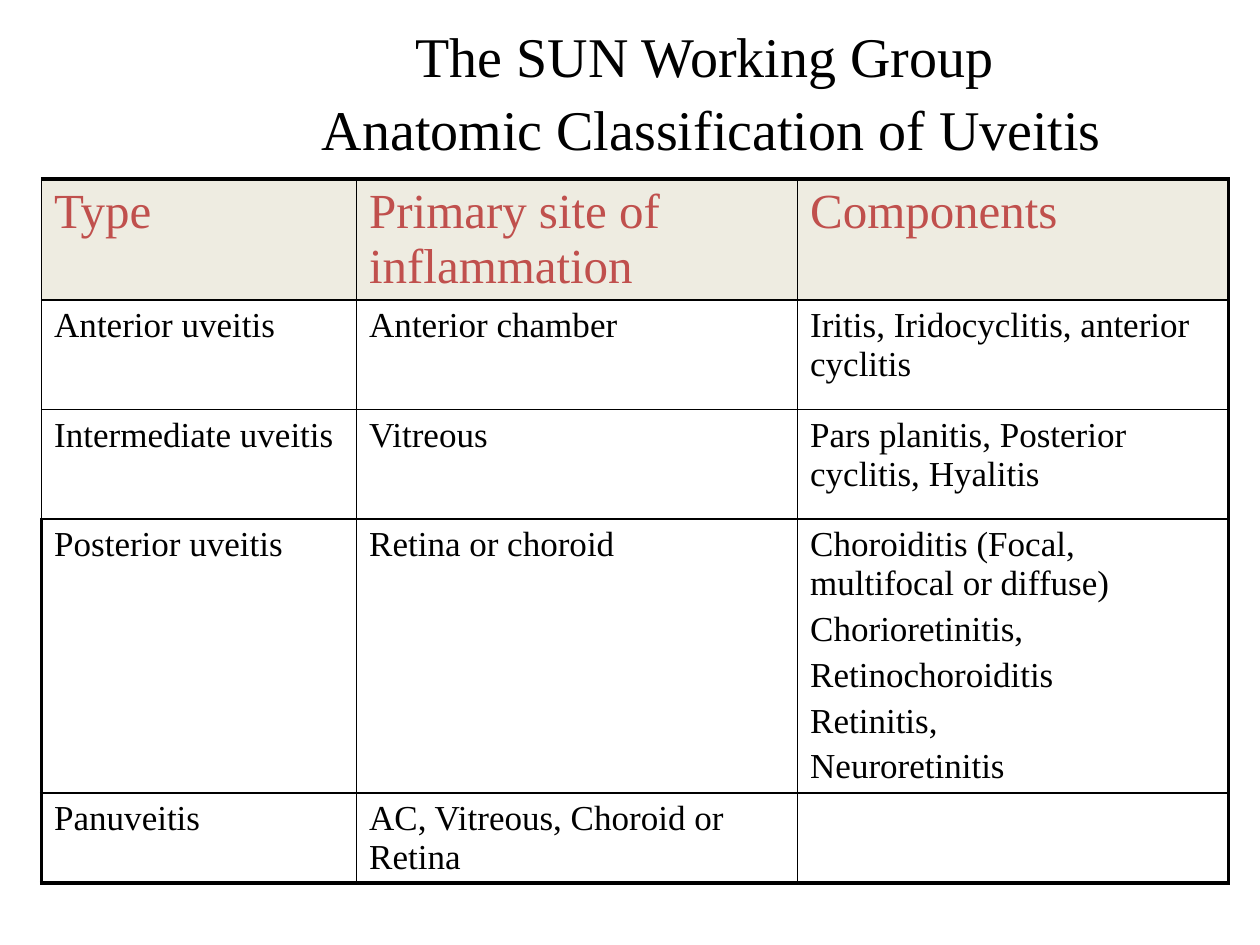
from dataclasses import dataclass

from lxml import etree
from pptx import Presentation
from pptx.dml.color import RGBColor
from pptx.enum.text import MSO_ANCHOR, PP_ALIGN
from pptx.oxml.ns import qn
from pptx.util import Inches, Pt

MIDDLE = MSO_ANCHOR.MIDDLE
CENTER = PP_ALIGN.CENTER


@dataclass(frozen=True)
class Theme:
    font: str = "Times New Roman"
    ink: str = "000000"
    accent: str = "C0504D"
    shade: str = "EEECE1"
    title: int = 32
    head: int = 28
    body: int = 20
    thin: float = 1
    thick: float = 2.25


theme = Theme()


def style(para, size, color):
    for run in para.runs:
        run.font.name = theme.font
        run.font.size = Pt(size)
        run.font.color.rgb = RGBColor.from_string(color)


def add_edge(cell, side, width):
    """Draw one border; call before the cell is filled, as lines come first."""
    props = cell._tc.get_or_add_tcPr()
    line = etree.SubElement(props, qn(f"a:ln{side}"), w=str(Pt(width)))
    fill = etree.SubElement(line, qn("a:solidFill"))
    etree.SubElement(fill, qn("a:srgbClr"), val=theme.ink)


prs = Presentation()
prs.slide_width, prs.slide_height = Inches(10), Inches(7.5)
slide = prs.slides.add_slide(prs.slide_layouts[5])

# Title
title = slide.shapes.title
title.left, title.top = Inches(1.39), Inches(0.08)
title.width, title.height = Inches(8.52), Inches(1.25)
frame = title.text_frame
frame.text = "The SUN Working Group \vAnatomic Classification of Uveitis"
frame.vertical_anchor = MIDDLE
para = frame.paragraphs[0]
para.alignment = CENTER
para.line_spacing = 1.08
style(para, theme.title, theme.ink)

# Table
rows = [
    ("Type", "Primary site of inflammation", "Components"),
    ("Anterior uveitis", "Anterior chamber",
     "Iritis, Iridocyclitis, anterior cyclitis"),
    ("Intermediate uveitis", "Vitreous",
     "Pars planitis, Posterior cyclitis, Hyalitis"),
    ("Posterior uveitis", "Retina or choroid",
     "Choroiditis (Focal, multifocal or diffuse)\nChorioretinitis,\n"
     "Retinochoroiditis\nRetinitis,\nNeuroretinitis"),
    ("Panuveitis", "AC, Vitreous, Choroid or Retina", ""),
]
widths = [2.5, 3.5, 3.42]
heights = [0.95, 0.87, 0.87, 2.17, 0.71]
last_row, last_col = len(rows) - 1, len(widths) - 1

table = slide.shapes.add_table(
    len(rows), len(widths), Inches(0.33), Inches(1.42),
    Inches(sum(widths)), Inches(sum(heights))).table
table.first_row = table.horz_banding = False
for col, width in zip(table.columns, widths):
    col.width = Inches(width)
for row, height in zip(table.rows, heights):
    row.height = Inches(height)

for r, texts in enumerate(rows):
    size, color = (theme.body, theme.ink) if r else (theme.head, theme.accent)
    for c, text in enumerate(texts):
        cell = table.cell(r, c)
        heavy = {
            "L": c == 0 and r >= 3,
            "R": c == last_col,
            "T": r == 0,
            "B": r == last_row,
        }
        for side, bold in heavy.items():
            add_edge(cell, side, theme.thick if bold else theme.thin)
        if r == 0:
            cell.fill.solid()
            cell.fill.fore_color.rgb = RGBColor.from_string(theme.shade)
        else:
            cell.fill.background()
        cell.text_frame.text = text
        for i, para in enumerate(cell.text_frame.paragraphs):
            if i:
                para.space_before = Pt(size * 0.2)
            style(para, size, color)

prs.save("out.pptx")
